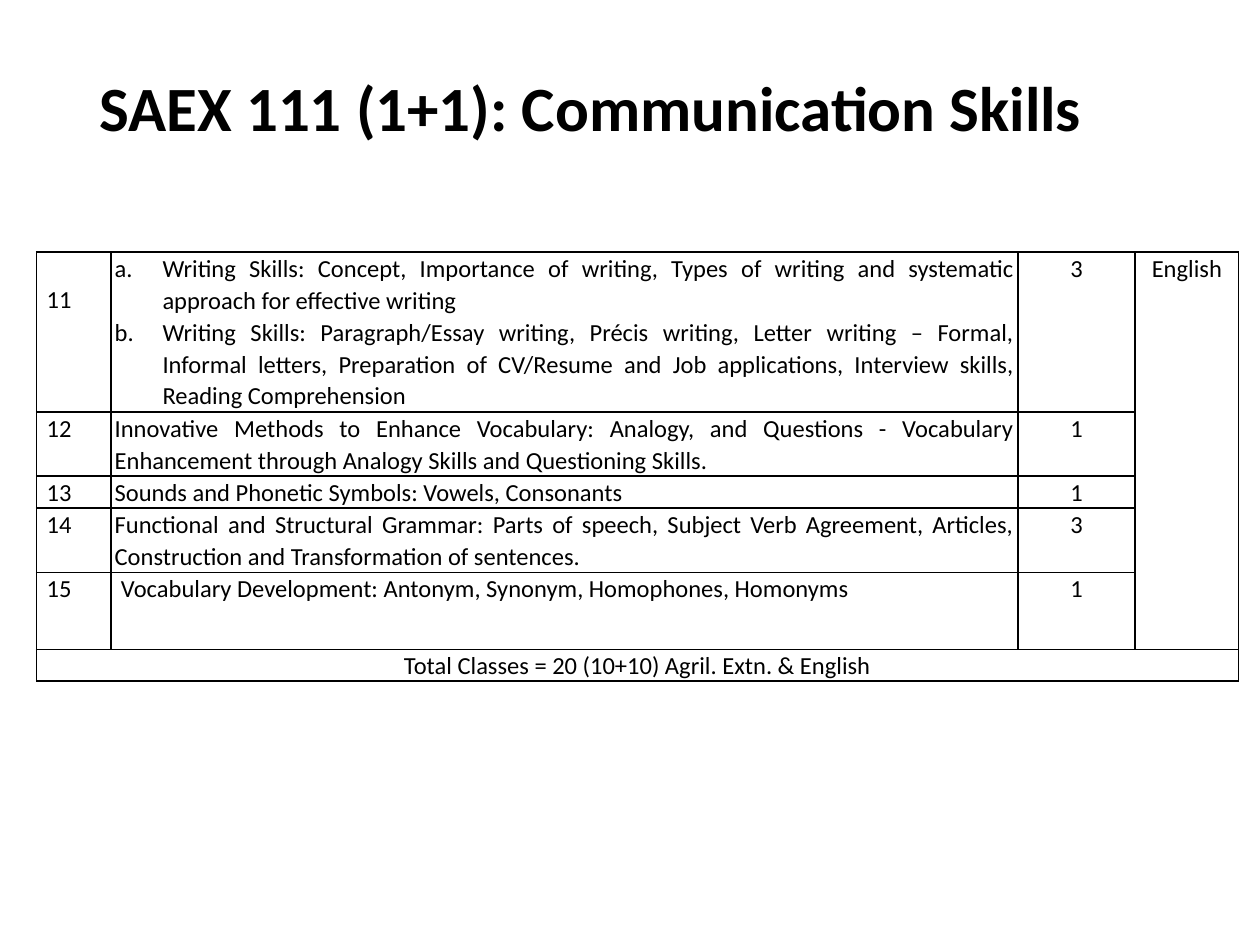
from dataclasses import dataclass

import lxml.etree
import pptx
import pptx.dml.color
import pptx.enum.text
import pptx.oxml.ns
import pptx.table
import pptx.util

Inches = pptx.util.Inches
Pt = pptx.util.Pt
Align = pptx.enum.text.PP_ALIGN


@dataclass(frozen=True)
class Theme:
    font: str = "Calibri"
    ink: str = "000000"
    title: int = 36
    body: int = 14
    rule: float = 1


@dataclass(frozen=True)
class Topic:
    num: str
    lines: tuple[str, ...]
    hours: str
    height: float
    drop: float = 0  # space above the number, inches
    shift: float = 0  # extra left inset of the text, inches


THEME = Theme()
PAD = 0.03
COLS = (0.59, 7.2, 0.93, 0.82)
FOOT = 0.25
TOPICS = (
    Topic("11", (
        "Writing Skills: Concept, Importance of writing, Types of writing "
        "and systematic approach for effective writing",
        "Writing Skills: Paragraph/Essay writing, Précis writing, Letter "
        "writing – Formal, Informal letters, Preparation of CV/Resume and "
        "Job applications, Interview skills, Reading Comprehension",
    ), "3", 1.27, drop=0.25),
    Topic("12", (
        "Innovative Methods to Enhance Vocabulary: Analogy, and Questions - "
        "Vocabulary Enhancement through Analogy Skills and Questioning Skills.",
    ), "1", 0.51),
    Topic("13", ("Sounds and Phonetic Symbols: Vowels, Consonants",), "1", 0.25),
    Topic("14", (
        "Functional and Structural Grammar: Parts of speech, Subject Verb "
        "Agreement, Articles, Construction and Transformation of sentences.",
    ), "3", 0.51),
    Topic("15", (
        "Vocabulary Development: Antonym, Synonym, Homophones, Homonyms",
    ), "1", 0.61, shift=0.05),
)


def style(para, size: int, bold: bool = False) -> None:
    font = para.font
    font.name = THEME.font
    font.size = Pt(size)
    font.bold = bold
    font.color.rgb = pptx.dml.color.RGBColor.from_string(THEME.ink)


def letter(para) -> None:
    """Number the paragraph a., b., c. with a hanging indent."""
    props = para._p.get_or_add_pPr()
    props.set("marL", str(Inches(0.38)))
    props.set("indent", str(-Inches(0.38)))
    lxml.etree.SubElement(props, pptx.oxml.ns.qn("a:buFont"), typeface="+mj-lt")
    lxml.etree.SubElement(
        props, pptx.oxml.ns.qn("a:buAutoNum"), type="alphaLcPeriod")


def frame(cell: pptx.table._Cell) -> None:
    """Clear the fill and rule all four sides."""
    cell.fill.background()
    props = cell._tc.get_or_add_tcPr()
    for spot, side in enumerate(("lnL", "lnR", "lnT", "lnB")):
        line = lxml.etree.Element(
            pptx.oxml.ns.qn(f"a:{side}"), w=str(Pt(THEME.rule)))
        fill = lxml.etree.SubElement(line, pptx.oxml.ns.qn("a:solidFill"))
        lxml.etree.SubElement(
            fill, pptx.oxml.ns.qn("a:srgbClr"), val=THEME.ink)
        props.insert(spot, line)


def write(cell: pptx.table._Cell, lines: tuple[str, ...], align: Align,
          left: float = PAD, top: float = 0) -> None:
    cell.margin_left, cell.margin_right = Inches(left), Inches(PAD)
    cell.margin_top, cell.margin_bottom = Inches(top), 0
    cell.text_frame.text = "\n".join(lines)
    for para in cell.text_frame.paragraphs:
        para.alignment = align
        para.line_spacing = 1.07
        if len(lines) > 1:
            letter(para)
        style(para, THEME.body)


def head(slide, text: str) -> None:
    title = slide.shapes.title
    title.left, title.top = Inches(0.69), Inches(0.4)
    title.width, title.height = Inches(8.62), Inches(0.96)
    title.text_frame.text = text
    title.text_frame.vertical_anchor = pptx.enum.text.MSO_ANCHOR.MIDDLE
    para = title.text_frame.paragraphs[0]
    para.alignment = Align.LEFT
    para.line_spacing = 0.9
    style(para, THEME.title, bold=True)


def grid(slide) -> None:
    highs = [topic.height for topic in TOPICS] + [FOOT]
    table = slide.shapes.add_table(
        len(highs), len(COLS), Inches(0.29), Inches(2),
        Inches(sum(COLS)), Inches(sum(highs))).table
    table.first_row = table.horz_banding = False
    for col, width in zip(table.columns, COLS):
        col.width = Inches(width)
    for row, high in zip(table.rows, highs):
        row.height = Inches(high)
    for cell in table.iter_cells():
        write(cell, ("",), Align.LEFT)
        frame(cell)

    last, end = len(TOPICS), len(COLS) - 1
    table.cell(0, end).merge(table.cell(last - 1, end))
    table.cell(last, 0).merge(table.cell(last, end))
    for row, topic in enumerate(TOPICS):
        write(table.cell(row, 0), (topic.num,), Align.LEFT, 0.08, topic.drop)
        write(table.cell(row, 1), topic.lines, Align.JUSTIFY, PAD + topic.shift)
        write(table.cell(row, 2), (topic.hours,), Align.CENTER)
    write(table.cell(0, end), ("English",), Align.CENTER)
    write(table.cell(last, 0),
          ("Total Classes = 20 (10+10) Agril. Extn. & English",), Align.CENTER)


def main() -> None:
    deck = pptx.Presentation()
    deck.slide_width, deck.slide_height = Inches(10), Inches(7.5)
    slide = deck.slides.add_slide(deck.slide_layouts[5])
    grid(slide)
    head(slide, "SAEX 111 (1+1): Communication Skills")
    deck.save("out.pptx")


if __name__ == "__main__":
    main()
